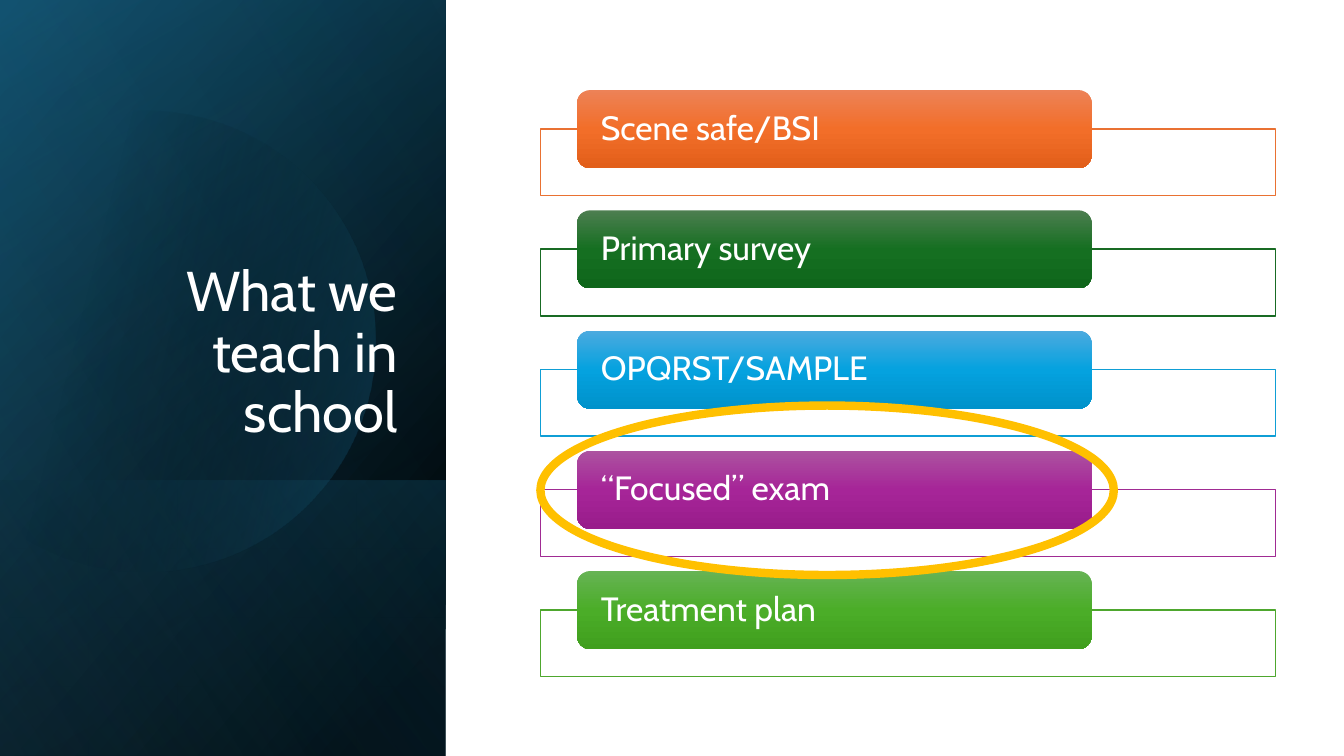
from math import cos, radians, sin, tan

from lxml import etree
from pptx import Presentation
from pptx.dml.color import RGBColor
from pptx.enum.shapes import MSO_SHAPE
from pptx.enum.text import MSO_ANCHOR, PP_ALIGN
from pptx.oxml.ns import qn
from pptx.util import Cm, Pt

RECT = MSO_SHAPE.RECTANGLE
ROUNDED = MSO_SHAPE.ROUNDED_RECTANGLE
OVAL = MSO_SHAPE.OVAL
MIDDLE, BOTTOM = MSO_ANCHOR.MIDDLE, MSO_ANCHOR.BOTTOM
LEFT, RIGHT = PP_ALIGN.LEFT, PP_ALIGN.RIGHT
FONT = "Cabin"
WHITE = "FFFFFF"

# Text, outline colour, gradient colours from top to bottom
STEPS = [
    ("Scene safe/BSI", "E97132", ("ED8257", "F26E29", "E25F1A")),
    ("Primary survey", "196B24", ("4D7E50", "156F21", "0F661B")),
    ("OPQRST/SAMPLE", "0F9ED5", ("4CAADF", "05A2DF", "0092CB")),
    ("“Focused” exam", "A02B93", ("AC53A0", "A62598", "991C8B")),
    ("Treatment plan", "4EA72E", ("66B354", "4BAD28", "409F1E")),
]
FOCUS_STEP = 3
STEP_PITCH = 3.03
DISC_ANGLES = (-134, -90, 0, 90, 134)


def rgb(color):
    return RGBColor.from_string(color)


def add_color(parent, color, opacity):
    clr = etree.SubElement(parent, qn("a:srgbClr"), val=color)
    if opacity < 100:
        etree.SubElement(clr, qn("a:alpha"), val=str(opacity * 1000))


def set_solid(sp, color, opacity):
    fill = etree.Element(qn("a:solidFill"))
    add_color(fill, color, opacity)
    sp.element.spPr.insert(2, fill)


def set_gradient(sp, angle, stops):
    """Each stop is (position %, colour, opacity %)."""
    fill = etree.Element(qn("a:gradFill"), rotWithShape="1")
    stop_list = etree.SubElement(fill, qn("a:gsLst"))
    for position, color, opacity in stops:
        stop = etree.SubElement(stop_list, qn("a:gs"), pos=str(position * 1000))
        add_color(stop, color, opacity)
    etree.SubElement(fill, qn("a:lin"), ang=str(angle * 60000), scaled="0")
    sp.element.spPr.insert(2, fill)


def add_plain(slide, kind, left, top, width, height):
    sp = slide.shapes.add_shape(kind, Cm(left), Cm(top), Cm(width), Cm(height))
    sp.shadow.inherit = False
    return sp


def set_outline(sp, color, points):
    sp.line.color.rgb = rgb(color)
    sp.line.width = Pt(points)


def set_text(sp, text, size, align, anchor):
    tf = sp.text_frame
    tf.word_wrap = True
    tf.vertical_anchor = anchor
    p = tf.paragraphs[0]
    p.text = text
    p.alignment = align
    p.line_spacing = 0.9
    p.font.name = FONT
    p.font.size = Pt(size)
    p.font.color.rgb = rgb(WHITE)
    return tf


def add_turned_layer(slide, left, top, width, height, angle, stops):
    """Cover the given box with a mirrored rectangle turned by 90 degrees."""
    sp = add_plain(slide, RECT, left + (width - height) / 2,
                   top + (height - width) / 2, height, width)
    sp.rotation = 90
    sp.element.spPr.xfrm.set("flipH", "1")
    sp.line.fill.background()
    set_gradient(sp, angle, stops)


def add_cut_disc(slide, left, top, radius):
    """Disc with its left side cut off, drawn as four curves."""
    center_x = left - radius * cos(radians(DISC_ANGLES[0]))
    center_y = top + radius

    def place(angle, pull=0):
        """Point on the rim, moved along the tangent by pull radii."""
        c, s = cos(radians(angle)), sin(radians(angle))
        return (Cm(center_x + radius * (c - pull * s)),
                Cm(center_y + radius * (s + pull * c)))

    points = []
    for a, b in zip(DISC_ANGLES, DISC_ANGLES[1:]):
        pull = 4 / 3 * tan(radians(b - a) / 4)
        points += [place(a, pull), place(b, -pull), place(b)]
    builder = slide.shapes.build_freeform(*place(DISC_ANGLES[0]))
    builder.add_line_segments(points, close=True)
    sp = builder.convert_to_shape()

    # Join every three line ends into one curve
    lines = list(sp.element.iter(qn("a:lnTo")))
    for i in range(0, len(points), 3):
        first, *others = lines[i:i + 3]
        first.tag = qn("a:cubicBezTo")
        for line in others:
            first.append(line[0])
            line.getparent().remove(line)

    sp.shadow.inherit = False
    sp.line.fill.background()
    set_gradient(sp, 14, [(29, "000000", 0), (100, "156082", 43)])


def add_title_panel(slide, left, top, width, height):
    panel = (left, top, width, height)
    band_height = 6.95
    band = (left, top + height - band_height, width, band_height)

    # Background layers
    add_turned_layer(slide, *panel, 50, [(8, "000000", 100), (100, "104862", 100)])
    add_turned_layer(slide, *panel, 30, [(0, "000000", 0), (99, "156082", 46)])
    add_turned_layer(slide, *band, 130, [(2, "156082", 29), (100, "000000", 30)])
    add_cut_disc(slide, left - 0.38, top + 2.79, 5.8)
    add_turned_layer(slide, *panel, 120, [(0, "000000", 0), (99, "46B1E1", 11)])

    # Title
    tb = slide.shapes.add_textbox(Cm(left + 1.61), Cm(top + 4.68), Cm(8.66), Cm(6.65))
    set_text(tb, "What we teach in school", 40, RIGHT, BOTTOM)


def add_step(slide, left, top, width, text, outline, colors):
    # Outlined box behind the label
    box = add_plain(slide, RECT, left, top + 0.98, width, 1.68)
    set_solid(box, WHITE, 90)
    set_outline(box, outline, 1)

    # Label
    label = add_plain(slide, ROUNDED, left + width * 0.05, top, width * 0.7, 1.97)
    label.line.fill.background()
    set_gradient(label, 90, [(i * 50, color, 100) for i, color in enumerate(colors)])
    tf = set_text(label, text, 24, LEFT, MIDDLE)
    tf.margin_left = tf.margin_right = Cm(0.5)
    tf.margin_top = tf.margin_bottom = 0


def add_step_list(slide, left, top, width):
    for i, step in enumerate(STEPS):
        add_step(slide, left, top + i * STEP_PITCH, width, *step)

    # Ring around the focused exam
    ring_top = top + FOCUS_STEP * STEP_PITCH - 1.14
    ring = add_plain(slide, OVAL, left, ring_top, 14.45, 4.27)
    ring.fill.background()
    set_outline(ring, "FFC000", 6)


def main():
    prs = Presentation()
    prs.slide_width, prs.slide_height = Cm(33.87), Cm(19.05)
    slide = prs.slides.add_slide(prs.slide_layouts[6])
    add_title_panel(slide, 0, 0, 11.23, 19.05)
    add_step_list(slide, 13.62, 2.27, 18.52)
    prs.save("out.pptx")


if __name__ == "__main__":
    main()
